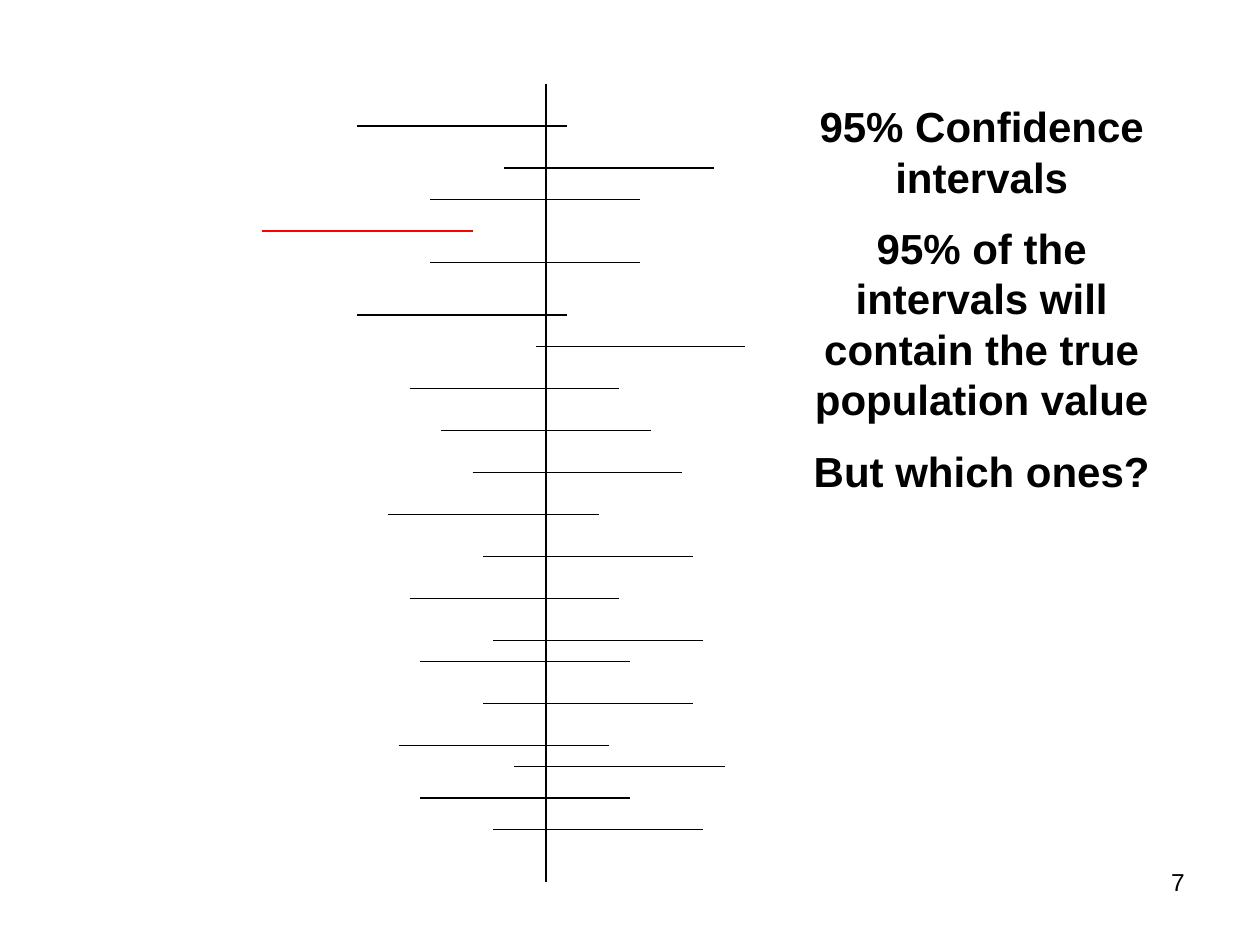
"""Build a slide of confidence intervals around a true population value."""
from typing import NamedTuple

from lxml.etree import SubElement
from pptx import Presentation
from pptx.dml.color import RGBColor
from pptx.enum.shapes import MSO_CONNECTOR
from pptx.enum.text import PP_ALIGN
from pptx.oxml.ns import qn
from pptx.slide import Slide
from pptx.util import Pt

BLACK = "000000"
RED = "FF0000"
INTERVAL_WIDTH = 120
TRUE_VALUE = 312


class Interval(NamedTuple):
    left: float
    top: float
    color: str = BLACK


INTERVALS = [
    Interval(204, 72), Interval(288, 96), Interval(246, 114),
    Interval(150, 132, RED), Interval(246, 150), Interval(204, 180),
    Interval(306, 198), Interval(234, 222), Interval(252, 246),
    Interval(270, 270), Interval(222, 294), Interval(276, 318),
    Interval(234, 342), Interval(282, 366), Interval(240, 378),
    Interval(276, 402), Interval(228, 426), Interval(294, 438),
    Interval(240, 456), Interval(282, 474),
]


def rgb(color: str) -> RGBColor:
    """Turn a hex string into a colour."""
    return RGBColor.from_string(color)


def add_line(slide: Slide, x1: float, y1: float, x2: float, y2: float, color: str = BLACK) -> None:
    """Draw a thin straight line."""
    line = slide.shapes.add_connector(MSO_CONNECTOR.STRAIGHT, Pt(x1), Pt(y1), Pt(x2), Pt(y2))
    line.line.color.rgb = rgb(color)
    line.line.width = Pt(0.75)
    SubElement(line._element.spPr, qn("a:effectLst"))


def add_text(slide: Slide, text: str, left: float, top: float, width: float, height: float, *,
             size: float, align: PP_ALIGN, bold: bool = False, space_before: float = 0,
             line_spacing: float = 1.0) -> None:
    """Add a wrapped text box with one paragraph per line of text."""
    frame = slide.shapes.add_textbox(Pt(left), Pt(top), Pt(width), Pt(height)).text_frame
    frame.word_wrap = True
    frame.text = text
    for paragraph in frame.paragraphs:
        paragraph.alignment = align
        paragraph.space_before = Pt(space_before)
        paragraph.line_spacing = line_spacing
        font = paragraph.font
        font.name = "Arial"
        font.size = Pt(size)
        font.bold = bold
        font.color.rgb = rgb(BLACK)


def main() -> None:
    """Build and save the slide."""
    presentation = Presentation()
    presentation.slide_width, presentation.slide_height = Pt(720), Pt(540)
    slide = presentation.slides.add_slide(presentation.slide_layouts[6])
    for interval in INTERVALS:
        add_line(slide, interval.left, interval.top,
                 interval.left + INTERVAL_WIDTH, interval.top, interval.color)
    add_line(slide, TRUE_VALUE, 48, TRUE_VALUE, 504)
    messages = [
        "95% Confidence intervals",
        "95% of the intervals will contain the true population value",
        "But which ones?",
    ]
    add_text(slide, "\n".join(messages), 456, 54, 210, 237.6,
             size=24, align=PP_ALIGN.CENTER, bold=True, space_before=12)
    add_text(slide, "7", 516, 492, 168, 37.5, size=14, align=PP_ALIGN.RIGHT)
    presentation.save("out.pptx")


if __name__ == "__main__":
    main()
